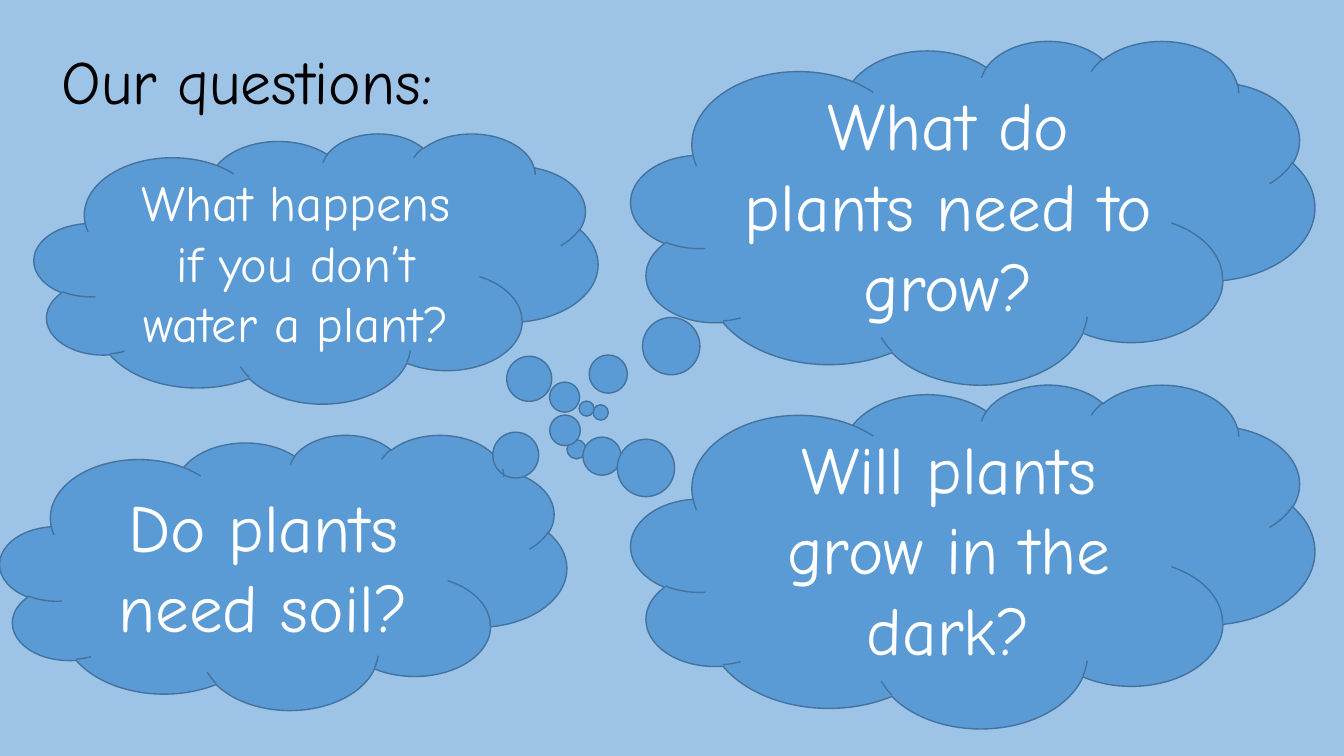
from pptx import Presentation
from pptx import util as u
from pptx.dml.color import RGBColor
from pptx.enum import shapes, text

WIDTH, HEIGHT = u.Inches(13.33), u.Inches(7.5)


def color(value):
    return RGBColor.from_string(value)


class QuestionBoard:
    font = "Comic Neue"
    background = "9DC3E6"
    cloud_fill = "5B9BD5"
    cloud_line = "43739E"

    def __init__(self, presentation):
        self.slide = presentation.slides.add_slide(presentation.slide_layouts[6])
        fill = self.slide.background.fill
        fill.solid()
        fill.fore_color.rgb = color(self.background)

    def box(self, left, top, width, height):
        return (
            u.Emu(round(WIDTH * left / 100)),
            u.Emu(round(HEIGHT * top / 100)),
            u.Emu(round(WIDTH * width / 100)),
            u.Emu(round(HEIGHT * height / 100)),
        )

    def label(self, shape, words, size, ink, alignment):
        frame = shape.text_frame
        frame.word_wrap = True
        frame.vertical_anchor = text.MSO_ANCHOR.MIDDLE
        paragraph = frame.paragraphs[0]
        paragraph.text = words
        paragraph.alignment = alignment
        paragraph.font.name = self.font
        paragraph.font.size = u.Pt(size)
        paragraph.font.color.rgb = color(ink)
        return paragraph

    def title(self, words, area):
        shape = self.slide.shapes.add_textbox(*self.box(*area))
        paragraph = self.label(shape, words, 44, "000000", text.PP_ALIGN.LEFT)
        paragraph.line_spacing = 0.9

    def cloud(self, words, area, tail, size=48):
        shape = self.slide.shapes.add_shape(
            shapes.MSO_SHAPE.CLOUD_CALLOUT, *self.box(*area)
        )
        shape.shadow.inherit = False
        shape.adjustments[0], shape.adjustments[1] = tail
        shape.fill.solid()
        shape.fill.fore_color.rgb = color(self.cloud_fill)
        shape.line.color.rgb = color(self.cloud_line)
        shape.line.width = u.Pt(1)
        self.label(shape, words, size, "FFFFFF", text.PP_ALIGN.CENTER)


def main():
    presentation = Presentation()
    presentation.slide_width, presentation.slide_height = WIDTH, HEIGHT
    board = QuestionBoard(presentation)

    board.title("Our questions:", (3.83, 1.47, 86.27, 19.33))

    left, top, width, height = 46.96, 5.33, 50.86, 45.47
    right_clouds = [
        ("What do plants need to grow?", (-0.6, 0.53)),
        ("Will plants grow in the dark?", (-0.58, -0.31)),
    ]
    for row, (question, tail) in enumerate(right_clouds):
        board.cloud(question, (left, top + row * height, width, height), tail)

    board.cloud("Do plants need soil?", (0, 57.47, 42.16, 36.4), (0.56, -0.58))
    board.cloud(
        "What happens if you don’t water a plant?",
        (2.55, 17.6, 41.94, 35.73),
        (0.48, 0.52),
        size=36,
    )

    presentation.save("out.pptx")


if __name__ == "__main__":
    main()
